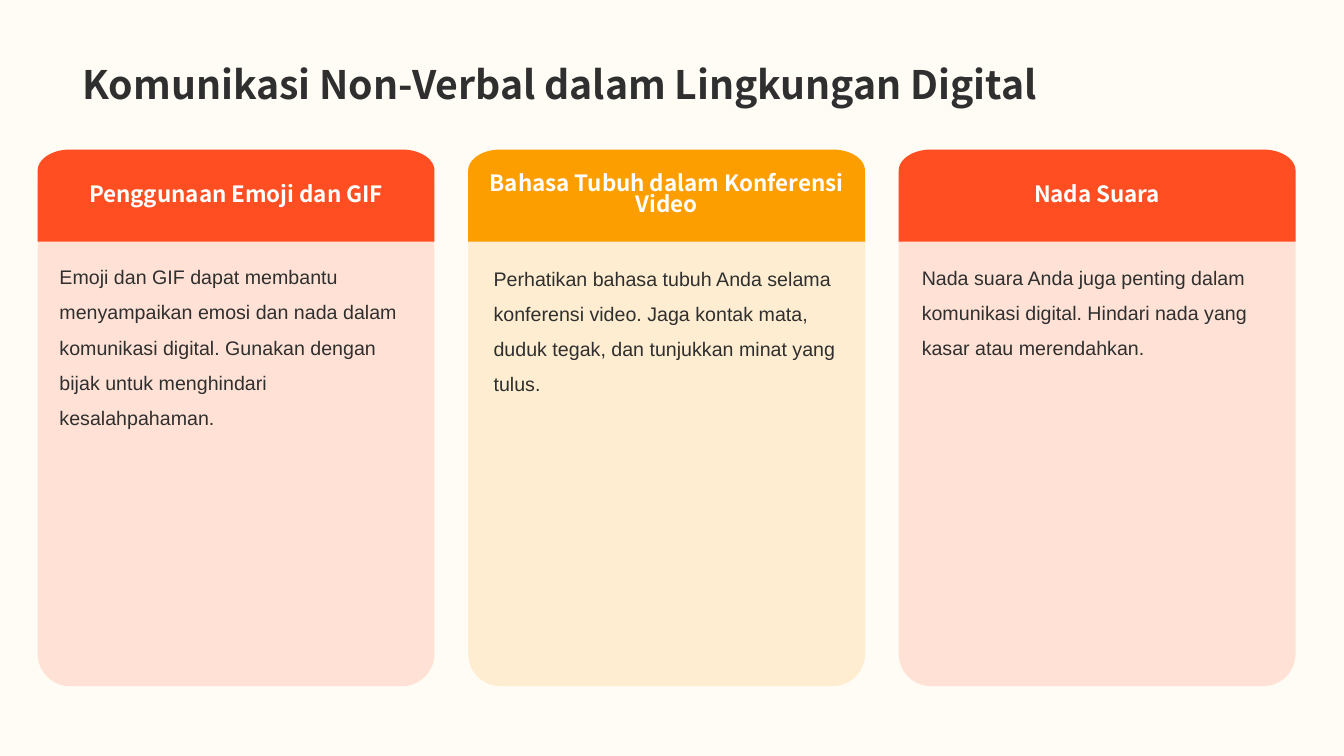
from dataclasses import dataclass
from math import cos, pi, sin

from lxml.etree import SubElement
from pptx import Presentation
from pptx.dml.color import RGBColor as RGB
from pptx.enum.shapes import MSO_SHAPE as Shape
from pptx.enum.text import MSO_ANCHOR as Anchor, MSO_AUTO_SIZE as Fit, PP_ALIGN as Align
from pptx.oxml.ns import qn
from pptx.util import Cm, Pt


@dataclass(frozen=True)
class Theme:
    paper: str = "FFFCF5"
    ink: str = "2F2F2F"
    white: str = "FFFFFF"
    red: str = "FF4E22"
    amber: str = "FD9E00"
    tint: int = 15
    head: str = "Noto Sans CJK SC"
    body: str = "Arial"
    big: int = 28
    mid: int = 16
    small: int = 14


class Deck:
    def __init__(self, theme):
        self.theme = theme
        self.prs = Presentation()
        self.prs.slide_width, self.prs.slide_height = Cm(33.87), Cm(19.05)
        self.slide = self.prs.slides.add_slide(self.prs.slide_layouts[5])
        self.paint(self.slide.background.fill, theme.paper)

    def paint(self, fill, color):
        fill.solid()
        fill.fore_color.rgb = RGB.from_string(color)

    def label(self, frame, text, face, size, color, bold, align, lead):
        frame.word_wrap = True
        para = frame.paragraphs[0]
        para.text = text
        para.alignment = align
        para.line_spacing = lead
        font = para.font
        font.name, font.size, font.bold = face, Pt(size), bold
        font.color.rgb = RGB.from_string(color)

    def title(self, text):
        t, box = self.theme, self.slide.shapes.title
        box.left, box.top, box.width, box.height = Cm(1.83), Cm(0), Cm(30.18), Cm(2.85)
        frame = box.text_frame
        frame.auto_size = Fit.NONE
        frame.vertical_anchor = Anchor.BOTTOM
        self.label(frame, text, t.head, t.big, t.ink, True, Align.LEFT, 0.9)

    def card(self, x, y, w, h, r, color):
        card = self.slide.shapes.add_shape(
            Shape.ROUNDED_RECTANGLE, Cm(x), Cm(y), Cm(w), Cm(h))
        card.adjustments[0] = r / w
        card.shadow.inherit = False
        card.line.fill.background()
        self.paint(card.fill, color)
        # Let the paper show through
        tone = card.element.spPr.find(qn("a:solidFill"))[0]
        SubElement(tone, qn("a:alpha"), val=str(self.theme.tint * 1000))

    def header(self, x, y, w, h, rx, ry, color, text):
        # Elliptical top corners, square bottom corners
        steps = [i * pi / 32 for i in range(17)]
        left = [(x + rx - rx * cos(a), y + ry - ry * sin(a)) for a in steps]
        right = [(2 * x + w - px, py) for px, py in reversed(left)]
        edge = left + right + [(x + w, y + h)]
        build = self.slide.shapes.build_freeform(Cm(x), Cm(y + h))
        build.add_line_segments([(Cm(px), Cm(py)) for px, py in edge], close=True)
        band = build.convert_to_shape()
        band.shadow.inherit = False
        band.line.fill.background()
        self.paint(band.fill, color)
        t, frame = self.theme, band.text_frame
        frame.vertical_anchor = Anchor.MIDDLE
        self.label(frame, text, t.head, t.mid, t.white, True, Align.CENTER, 0.8)

    def note(self, x, y, w, h, text):
        t = self.theme
        frame = self.slide.shapes.add_textbox(Cm(x), Cm(y), Cm(w), Cm(h)).text_frame
        frame.margin_left = frame.margin_right = Cm(0.3)
        frame.margin_top = frame.margin_bottom = Cm(0.3)
        frame.auto_size = Fit.SHAPE_TO_FIT_TEXT
        self.label(frame, text, t.body, t.small, t.ink, False, Align.LEFT, 1.5)


def main():
    theme = Theme()
    deck = Deck(theme)
    deck.title("Komunikasi Non-Verbal dalam Lingkungan Digital")

    # Heading, colour, text, then left, top and width of the text
    cards = [
        ("Penggunaan Emoji dan GIF", theme.red,
         "Emoji dan GIF dapat membantu menyampaikan emosi dan nada dalam komunikasi "
         "digital. Gunakan dengan bijak untuk menghindari kesalahpahaman.",
         1.2, 6.08, 9.53),
        ("Bahasa Tubuh dalam Konferensi Video", theme.amber,
         "Perhatikan bahasa tubuh Anda selama konferensi video. Jaga kontak mata, "
         "duduk tegak, dan tunjukkan minat yang tulus.",
         12.14, 6.12, 9.32),
        ("Nada Suara", theme.red,
         "Nada suara Anda juga penting dalam komunikasi digital. Hindari nada yang "
         "kasar atau merendahkan.",
         22.93, 6.1, 9.5),
    ]

    # Three equal columns
    left, top, wide, step = 0.95, 3.77, 10, 10.85
    for i, (head, color, text, x, y, w) in enumerate(cards):
        col = left + i * step
        deck.card(col, top, wide, 13.52, 0.81, color)
        deck.header(col, top, wide, 2.32, 0.81, 0.53, color, head)
        deck.note(x, y, w, 3.2, text)

    deck.prs.save("out.pptx")


if __name__ == "__main__":
    main()
